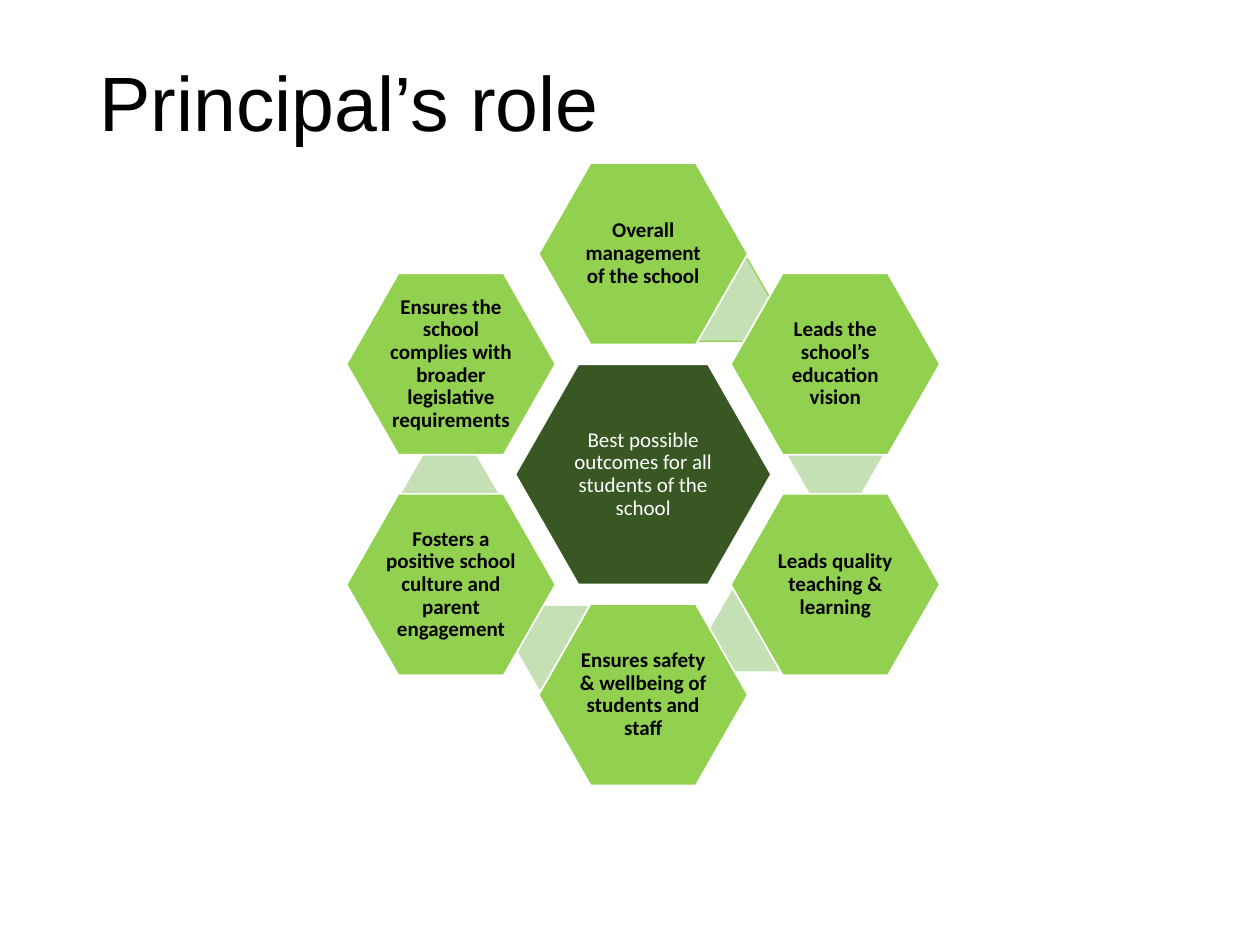
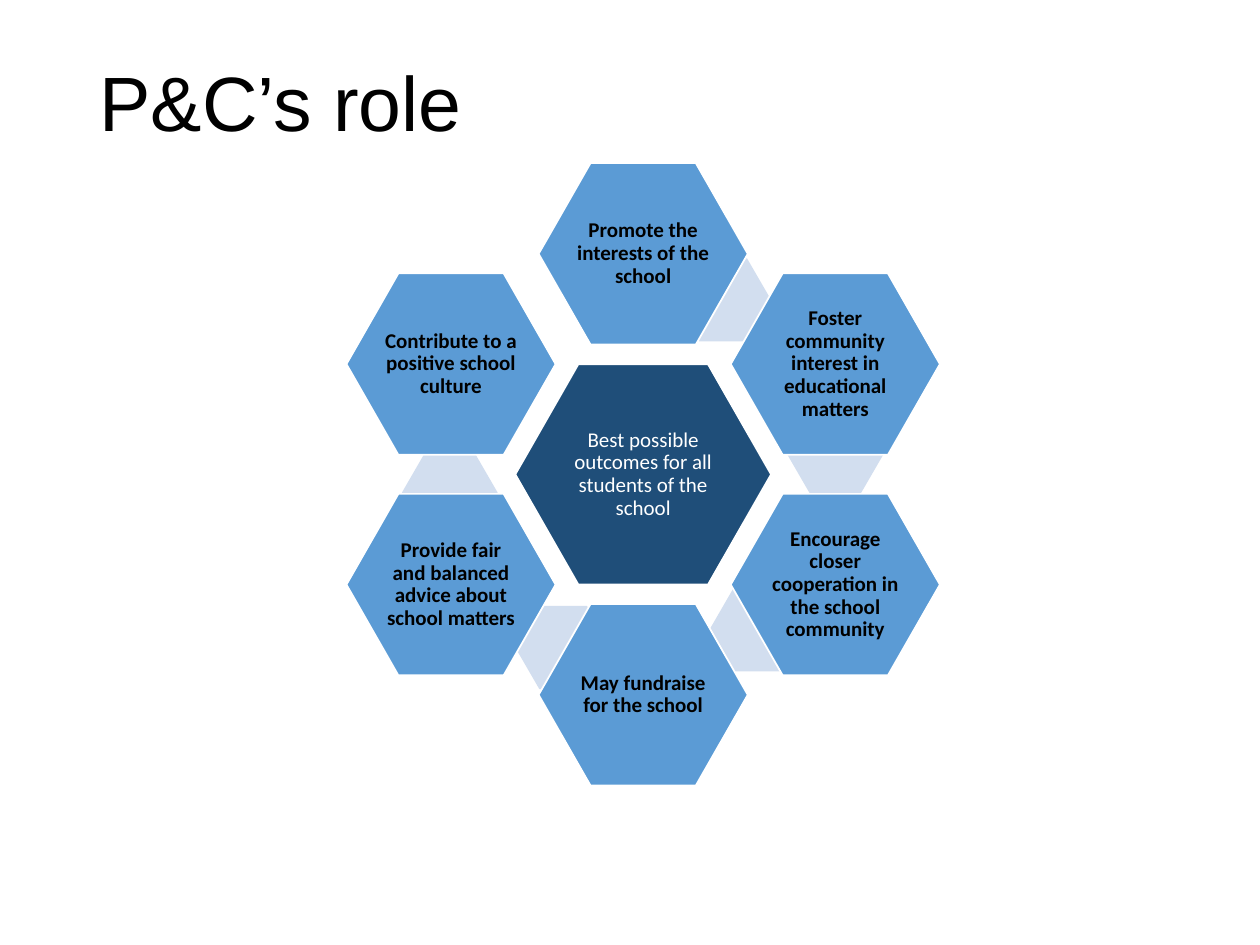
from dataclasses import dataclass
from typing import NamedTuple, Optional

import pptx
import pptx.dml.color
import pptx.enum.shapes
import pptx.enum.text
import pptx.util

PX = 914400 // 200

BLACK, WHITE = "000000", "FFFFFF"
TITLE_FONT, DUTY_FONT = "Arial", "Calibri"
OUTCOME = "Best possible outcomes for all students of the school"


class Box(NamedTuple):
    left: int
    top: int
    width: int
    height: int


@dataclass(frozen=True)
class Role:
    title: str
    core_fill: str
    duty_fill: str
    link_fill: str
    duties: tuple[str, ...]
    first_link_line: Optional[str] = None


TITLE_BOX = Box(138, 80, 1724, 178)
CENTRE_X, CENTRE_Y = 1021, 753
CORE_SIZE = (406, 350)
DUTY_SIZE = (332, 288)
LINK_SIZE = (152, 132)
STEP_X, STEP_Y = 305, 175
# Clockwise from the top, in steps away from the centre
RING = ((0, -2), (1, -1), (1, 1), (0, 2), (-1, 1), (-1, -1))
# Each link lies behind the duty of the same rank; the last duty has none
LINK_CORNERS = ((1072, 410), (1250, 656), (1126, 934), (818, 962), (638, 716))

ROLES = (
    Role("Principal’s role", "385723", "92D050", "C5E0B4", (
        "Overall management of the school",
        "Leads the school’s education vision",
        "Leads quality teaching & learning",
        "Ensures safety & wellbeing of students and staff",
        "Fosters a positive school culture and parent engagement",
        "Ensures the school complies with broader legislative requirements",
    ), first_link_line="92D050"),
    Role("P&C’s role", "1F4E79", "5B9BD5", "D2DEEF", (
        "Promote the interests of the school",
        "Foster community interest in educational matters",
        "Encourage closer cooperation in the school community",
        "May fundraise for the school",
        "Provide fair and balanced advice about school matters",
        "Contribute to a positive school culture",
    )),
)


def rgb(value: str) -> pptx.dml.color.RGBColor:
    return pptx.dml.color.RGBColor.from_string(value)


def centred(size: tuple[int, int], x: int, y: int) -> Box:
    """Return the box of the given size around a centre point."""
    width, height = size
    return Box(x - width // 2, y - height // 2, width, height)


def write(frame, text: str, font: str, size: int, color: str,
          align, bold: bool = False) -> None:
    frame.word_wrap = True
    frame.auto_size = pptx.enum.text.MSO_AUTO_SIZE.NONE
    frame.vertical_anchor = pptx.enum.text.MSO_ANCHOR.MIDDLE
    paragraph = frame.paragraphs[0]
    paragraph.alignment = align
    paragraph.line_spacing = 0.9
    run = paragraph.add_run()
    run.text = text
    run.font.name = font
    run.font.size = pptx.util.Pt(size)
    run.font.bold = bold
    run.font.color.rgb = rgb(color)


def add_hexagon(shapes, box: Box, slant: float, fill: str,
                line: Optional[str], line_width: float = 1):
    hexagon = shapes.add_shape(pptx.enum.shapes.MSO_SHAPE.HEXAGON,
                               *(length * PX for length in box))
    hexagon.adjustments[0] = slant
    hexagon.shadow.inherit = False
    hexagon.fill.solid()
    hexagon.fill.fore_color.rgb = rgb(fill)
    if line:
        hexagon.line.color.rgb = rgb(line)
        hexagon.line.width = pptx.util.Pt(line_width)
    else:
        hexagon.line.fill.background()
    return hexagon


def add_labelled_hexagon(shapes, box: Box, fill: str, text: str,
                         color: str, bold: bool) -> None:
    frame = add_hexagon(shapes, box, 0.286, fill, WHITE).text_frame
    frame.margin_left = frame.margin_right = 4 * PX
    frame.margin_top = frame.margin_bottom = 4 * PX
    write(frame, text, DUTY_FONT, 12, color,
          pptx.enum.text.PP_ALIGN.CENTER, bold)


def add_title(slide, text: str) -> None:
    title = slide.shapes.title
    title.left, title.top, title.width, title.height = (
        length * PX for length in TITLE_BOX)
    write(title.text_frame, text, TITLE_FONT, 44, BLACK,
          pptx.enum.text.PP_ALIGN.LEFT)


def add_role_slide(deck, role: Role) -> None:
    slide = deck.slides.add_slide(deck.slide_layouts[5])
    add_title(slide, role.title)
    cluster = slide.shapes.add_group_shape().shapes
    add_labelled_hexagon(cluster, centred(CORE_SIZE, CENTRE_X, CENTRE_Y),
                         role.core_fill, OUTCOME, WHITE, False)
    for rank, (duty, (across, down)) in enumerate(zip(role.duties, RING)):
        if rank < len(LINK_CORNERS):
            add_hexagon(cluster, Box(*LINK_CORNERS[rank], *LINK_SIZE), 0.289,
                        role.link_fill,
                        role.first_link_line if rank == 0 else None, 0.75)
        place = centred(DUTY_SIZE, CENTRE_X + across * STEP_X,
                        CENTRE_Y + down * STEP_Y)
        add_labelled_hexagon(cluster, place, role.duty_fill, duty, BLACK, True)


def main() -> None:
    deck = pptx.Presentation()
    deck.slide_width, deck.slide_height = 2000 * PX, 1500 * PX
    for role in ROLES:
        add_role_slide(deck, role)
    deck.save("out.pptx")


if __name__ == "__main__":
    main()
